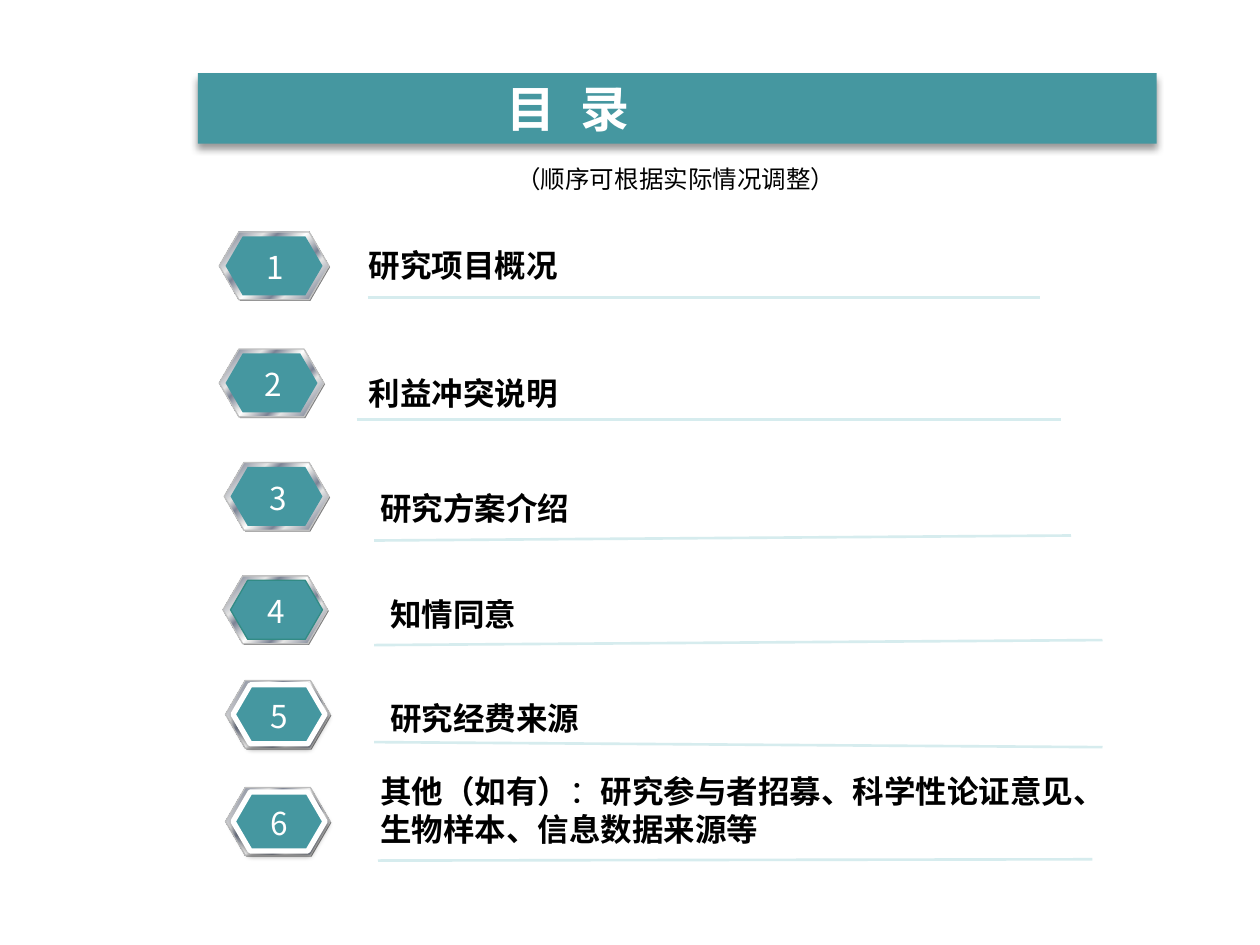
from lxml.etree import SubElement
from pptx import Presentation
from pptx.dml.color import RGBColor
from pptx.enum.shapes import MSO_CONNECTOR, MSO_SHAPE
from pptx.enum.text import MSO_ANCHOR, PP_ALIGN
from pptx.oxml import parse_xml
from pptx.oxml.ns import nsdecls, qn
from pptx.util import Inches, Pt

FONT = "Noto Sans CJK SC"
COLORS = {
    "teal": "4597A0", "dark_teal": "328B85", "rule": "D6ECEE",
    "gray": "808080", "silver": "C0C0C0", "white": "FFFFFF", "black": "000000",
}
METAL_STOPS = [
    (0, "E6E6E6"), (7, "7D8496"), (26, "E6E6E6"), (34, "7D8496"),
    (46, "E6E6E6"), (50, "FFFFFF"), (54, "E6E6E6"), (66, "7D8496"),
    (73, "E6E6E6"), (92, "7D8496"), (100, "E6E6E6"),
]
TITLE = "目 录"
SUBTITLE = "（顺序可根据实际情况调整）"

# badge: left, top, width; text: left, top, width, height; rule: x1, y1, x2, y2
# edge: outline of the inner hexagon (colour, points, shadow) or None
WHITE_EDGE = ("white", 3, True)
ITEMS = [
    dict(text="研究项目概况", badge=(1.74, 1.84, 0.87), box=(2.83, 1.9, 5.77, 0.4),
         rule=(2.92, 2.36, 8.25, 2.36), edge=None),
    dict(text="利益冲突说明", badge=(1.74, 2.77, 0.83), box=(2.83, 2.92, 5.5, 0.35),
         rule=(2.83, 3.33, 8.42, 3.33), edge=None),
    dict(text="研究方案介绍", badge=(1.78, 3.67, 0.83), box=(2.92, 3.83, 5.09, 0.4),
         rule=(2.97, 4.29, 8.5, 4.25), edge=None),
    dict(text="知情同意", badge=(1.77, 4.57, 0.83), box=(3, 4.67, 2.31, 0.4),
         rule=(2.97, 5.12, 8.75, 5.08), edge=("dark_teal", 0.75, False)),
    dict(text="研究经费来源", badge=(1.79, 5.4, 0.83), box=(3, 5.5, 2.31, 0.4),
         rule=(2.97, 5.89, 8.75, 5.93), edge=WHITE_EDGE),
    dict(text="其他（如有）：研究参与者招募、科学性论证意见、生物样本、信息数据来源等",
         badge=(1.79, 6.25, 0.83), box=(2.92, 6.08, 5.96, 0.71),
         rule=(3, 6.83, 8.67, 6.82), edge=WHITE_EDGE),
]


def rgb(name):
    return RGBColor.from_string(COLORS[name])


def add_shadow(shape, opacity, blur, distance):
    properties = shape._element.spPr
    for effects in properties.findall(qn("a:effectLst")):
        properties.remove(effects)
    properties.append(parse_xml(
        f'<a:effectLst {nsdecls("a")}><a:outerShdw blurRad="{Pt(blur)}" '
        f'dist="{Pt(distance)}" dir="5400000" rotWithShape="0"><a:srgbClr val="{COLORS["black"]}">'
        f'<a:alpha val="{opacity * 1000}"/></a:srgbClr></a:outerShdw></a:effectLst>'))


def add_filled(shapes, kind, place, fill, edge=None):
    shape = shapes.add_shape(kind, *map(Inches, place))
    shape.shadow.inherit = False
    shape.fill.solid()
    shape.fill.fore_color.rgb = rgb(fill)
    if edge:
        shape.line.color.rgb = rgb(edge[0])
        shape.line.width = Pt(edge[1])
    else:
        shape.line.fill.background()
    return shape


def add_hexagon(shapes, place, fill, edge=None):
    shape = add_filled(shapes, MSO_SHAPE.HEXAGON, place, fill, edge)
    shape.adjustments[0] = 0.29
    shape.adjustments[1] = 1.15
    return shape


def fill_metal(shape):
    stops = "".join(f'<a:gs pos="{position * 1000}"><a:srgbClr val="{color}"/></a:gs>'
                    for position, color in METAL_STOPS)
    solid = shape._element.spPr.find(qn("a:solidFill"))
    solid.getparent().replace(solid, parse_xml(
        f'<a:gradFill {nsdecls("a")}><a:gsLst>{stops}</a:gsLst>'
        f'<a:lin ang="2700000" scaled="0"/></a:gradFill>'))


def format_run(run, size, color, bold=False, font=FONT):
    run.font.size = Pt(size)
    run.font.bold = bold
    run.font.color.rgb = rgb(color)
    run.font.name = font
    SubElement(run._r.get_or_add_rPr(), qn("a:ea")).set("typeface", font)


def add_text(shapes, place, text, size, color, bold=False, align=PP_ALIGN.LEFT):
    box = shapes.add_textbox(*map(Inches, place))
    box.text_frame.word_wrap = True
    paragraph = box.text_frame.paragraphs[0]
    paragraph.alignment = align
    # The full-width colon is set in regular Arial
    for part in text.replace("：", "|：|").split("|"):
        run = paragraph.add_run()
        run.text = part
        if part == "：":
            format_run(run, size, color, font="Arial")
        else:
            format_run(run, size, color, bold)


def add_badge(slide, number, left, top, width, edge):
    shapes = slide.shapes.add_group_shape().shapes
    height = 0.54
    add_hexagon(shapes, (left + 0.01, top + 0.01, width, height), "gray")
    rim = add_hexagon(shapes, (left, top, width, height), "gray", ("silver", 0.75))
    fill_metal(rim)
    inset = 0.06 if edge else 0.05
    inner = add_hexagon(shapes, (left + inset, top + 0.035, width - 0.1, 0.47), "teal", edge)
    if edge and edge[2]:
        add_shadow(inner, 38, 3.1, 1.6)
    add_text(shapes, (left + width / 2 - 0.2, top + 0.08, 0.42, 0.4),
             str(number), 18, "white", align=PP_ALIGN.CENTER)


def add_rule(slide, ends):
    line = slide.shapes.add_connector(MSO_CONNECTOR.STRAIGHT, *map(Inches, ends))
    line.line.color.rgb = rgb("rule")
    line.line.width = Pt(1.5)
    SubElement(line._element.spPr, qn("a:effectLst"))


def add_title(slide):
    banner = add_filled(slide.shapes, MSO_SHAPE.RECTANGLE, (1.57, 0.58, 7.61, 0.56), "teal")
    add_shadow(banner, 40, 4, 3)
    frame = banner.text_frame
    frame.margin_left = Inches(2.45)
    frame.margin_top = frame.margin_right = frame.margin_bottom = Inches(0.04)
    frame.vertical_anchor = MSO_ANCHOR.MIDDLE
    frame.text = TITLE
    paragraph = frame.paragraphs[0]
    paragraph.alignment = PP_ALIGN.LEFT
    run = paragraph.runs[0]
    format_run(run, 28, "white", True)
    run._r.get_or_add_rPr().set("spc", "400")


def main():
    presentation = Presentation()
    presentation.slide_width = Inches(10)
    presentation.slide_height = Inches(7.5)
    slide = presentation.slides.add_slide(presentation.slide_layouts[6])

    # Heading
    add_title(slide)
    add_text(slide.shapes, (4, 1.25, 3.33, 0.34), SUBTITLE, 14, "black")

    # Numbered agenda
    for number, item in enumerate(ITEMS, 1):
        add_badge(slide, number, *item["badge"], item["edge"])
        add_rule(slide, item["rule"])
        add_text(slide.shapes, item["box"], item["text"], 18, "black", True)

    presentation.save("out.pptx")


if __name__ == "__main__":
    main()
